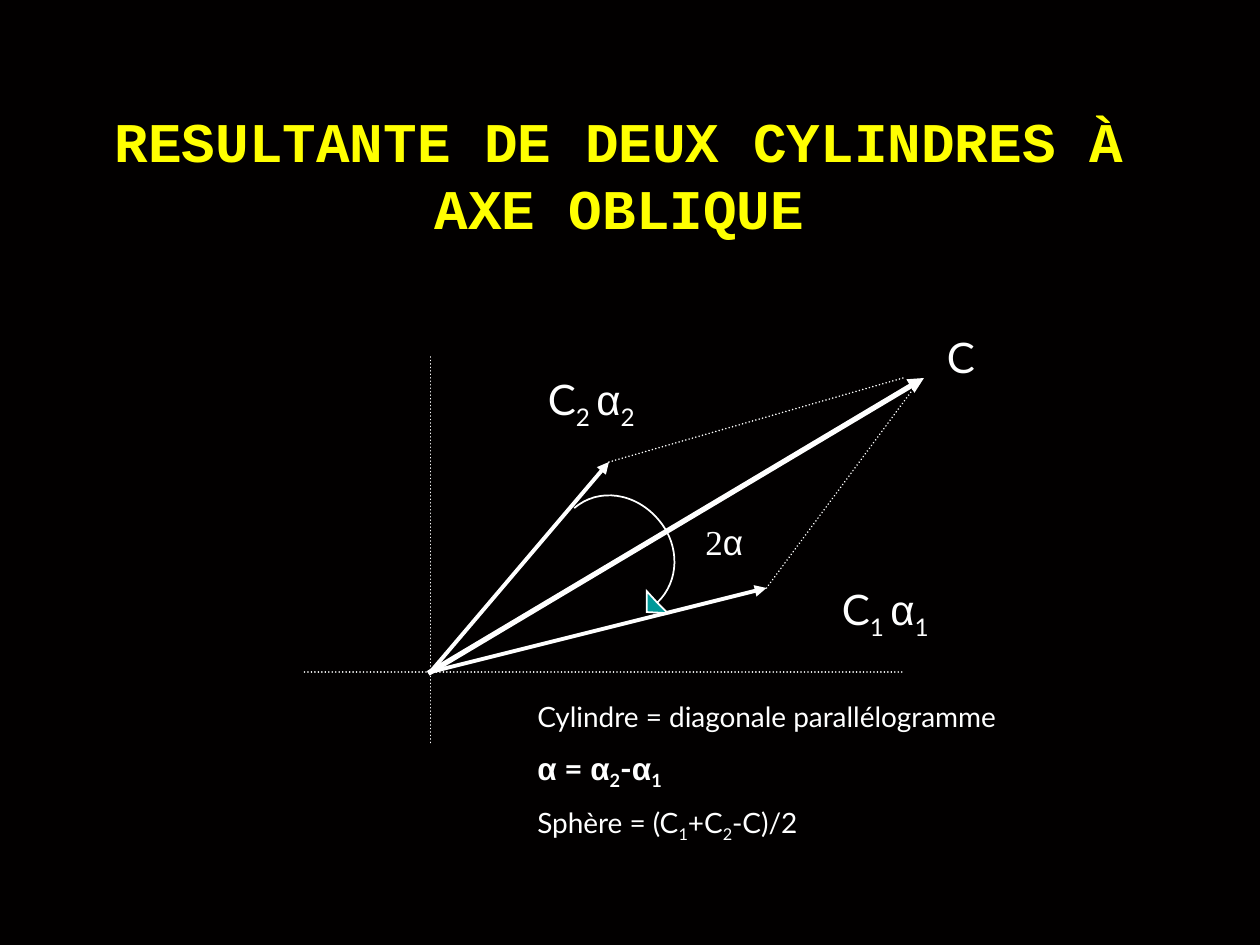
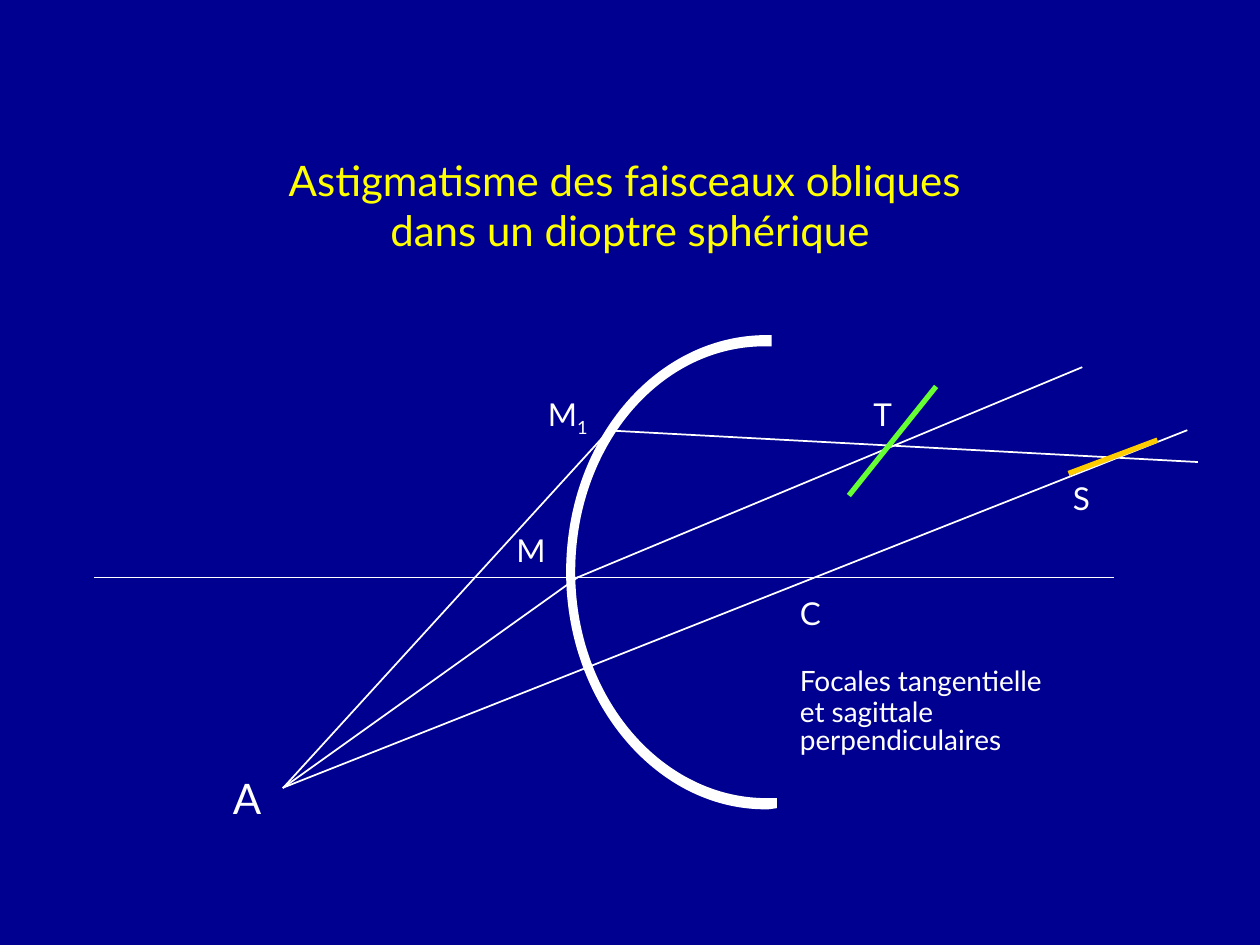
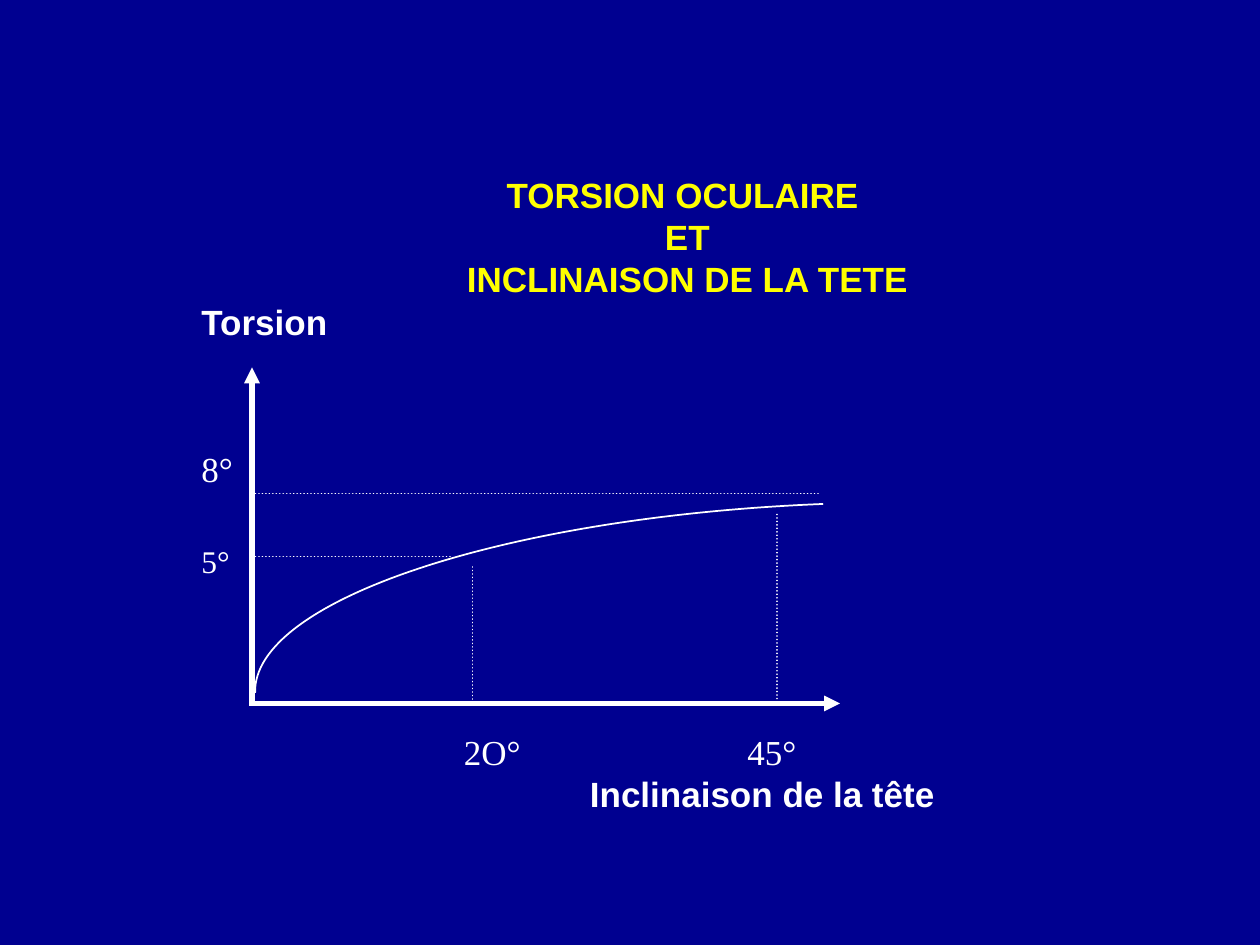
from itertools import groupby

from lxml import etree
from pptx import Presentation
from pptx.dml.color import RGBColor
from pptx.enum.dml import MSO_LINE
from pptx.enum.shapes import MSO_CONNECTOR
from pptx.enum.text import MSO_ANCHOR, PP_ALIGN
from pptx.oxml.ns import qn
from pptx.util import Emu, Pt

PX = 7620  # 120 px to the inch
BLACK = RGBColor(0x02, 0x00, 0x00)
NAVY = RGBColor(0x00, 0x00, 0x90)
WHITE = RGBColor(0xFF, 0xFF, 0xFF)
YELLOW = RGBColor(0xFF, 0xFF, 0x00)
TEAL = RGBColor(0x00, 0x99, 0x99)
GREEN = RGBColor(0x66, 0xFF, 0x33)
AMBER = RGBColor(0xFF, 0xCC, 0x00)

LATO, ARIAL, TIMES, COURIER = "Lato", "Arial", "Times New Roman", "Courier New"
LEFT, CENTER = PP_ALIGN.LEFT, PP_ALIGN.CENTER
TOP, MIDDLE = MSO_ANCHOR.TOP, MSO_ANCHOR.MIDDLE
DOTTED = MSO_LINE.ROUND_DOT
STRAIGHT = MSO_CONNECTOR.STRAIGHT


def px(n):
    return Emu(n * PX)


def new_slide(prs, background):
    s = prs.slides.add_slide(prs.slide_layouts[6])
    s.background.fill.solid()
    s.background.fill.fore_color.rgb = background
    return s


def add_run(p, content, size, font, color, bold, subscript):
    r = p.add_run()
    r.text = content
    r.font.size = Pt(size)
    r.font.name = font
    r.font.bold = bold
    r.font.color.rgb = color
    if subscript:
        r._r.get_or_add_rPr().set("baseline", "-25000")


def add_runs(p, content, size, font, color, bold):
    """Write one line: _ lowers the next character, and α is always in Arial."""
    head, *tails = content.split("_")
    pieces = [(head, False)]
    for tail in tails:
        pieces += [(tail[0], True), (tail[1:], False)]
    for piece, subscript in pieces:
        for is_alpha, chars in groupby(piece, lambda c: c == "α"):
            add_run(p, "".join(chars), size, ARIAL if is_alpha else font,
                    color, bold, subscript)


def text(s, x, y, w, h, *paragraphs, size=18, font=LATO, color=WHITE, bold=False,
         align=LEFT, anchor=TOP):
    """A paragraph is a string, or a (string, size, bold, line spacing) tuple."""
    tf = s.shapes.add_textbox(px(x), px(y), px(w), px(h)).text_frame
    tf.word_wrap = True
    tf.vertical_anchor = anchor
    for i, item in enumerate(paragraphs):
        if isinstance(item, str):
            item = (item, size, bold, None)
        content, p_size, p_bold, spacing = item
        p = tf.add_paragraph() if i else tf.paragraphs[0]
        p.alignment = align
        if i:
            p.space_before = Pt(p_size / 2)
        if spacing:
            p.line_spacing = spacing
        for j, row in enumerate(content.split("\n")):
            if j:
                p.add_line_break()
            add_runs(p, row, p_size, font, color, p_bold)


def title(s, x, y, w, content, **style):
    text(s, x, y, w, 150, content, color=YELLOW, align=CENTER, anchor=MIDDLE, **style)


def line(s, start, end, width=1, color=WHITE, dash=None, arrow=False):
    c = s.shapes.add_connector(STRAIGHT, *map(px, start + end))
    c.line.color.rgb = color
    c.line.width = Pt(width)
    if dash:
        c.line.dash_style = dash
    spPr = c._element.spPr
    ln = spPr.find(qn("a:ln"))
    ln.set("cap", "rnd" if dash else "sq")
    if arrow:
        etree.SubElement(ln, qn("a:tailEnd"), type="triangle")
    etree.SubElement(spPr, qn("a:effectLst"))


def outline(s, start, *segments, fill=None):
    """Segments of one point are straight, those of three are Bézier curves.

    The outline is closed when it has a fill.
    """
    builder = s.shapes.build_freeform(*map(px, start))
    points = [(px(x), px(y)) for segment in segments for x, y in segment]
    builder.add_line_segments(points, close=fill is not None)
    sp = builder.convert_to_shape()
    sp.shadow.inherit = False
    if fill is None:
        sp.fill.background()
    else:
        sp.fill.solid()
        sp.fill.fore_color.rgb = fill
    sp.line.color.rgb = WHITE
    sp.line.width = Pt(1)
    spPr = sp._element.spPr
    etree.SubElement(spPr.find(qn("a:ln")), qn("a:miter"), lim="800000")

    route = spPr.find(".//" + qn("a:path"))
    nodes = iter(route.findall(qn("a:lnTo")))
    for segment in segments:
        steps = [next(nodes) for _ in segment]
        if len(steps) == 3:
            curve = etree.Element(qn("a:cubicBezTo"))
            steps[0].addprevious(curve)
            for step in steps:
                curve.append(step[0])
                route.remove(step)


def cylinders_slide(prs):
    s = new_slide(prs, BLACK)
    title(s, 80, 90, 1020, "RESULTANTE DE DEUX CYLINDRES À AXE OBLIQUE",
          size=32, font=COURIER, bold=True)

    origin, c1, c2, resultant = (410, 640), (730, 560), (580, 440), (880, 360)
    line(s, origin, c1, 2.25, arrow=True)
    line(s, origin, c2, 2.25, arrow=True)
    line(s, c2, (860, 360), dash=DOTTED)
    line(s, c1, (870, 370), dash=DOTTED)
    line(s, origin, resultant, 3, arrow=True)
    line(s, (290, 640), (860, 640), dash=DOTTED)
    line(s, (410, 340), (410, 710), dash=DOTTED)

    text(s, 500, 660, 600, 146,
         "Cylindre = diagonale parallélogramme",
         ("α = α_2-α_1", 18, True, None),
         "Sphère = (C_1+C_2-C)/2", size=16)
    for x, y, label in ((790, 550, "C_1_ α_1"), (510, 350, "C_2_ α_2"), (890, 310, "C")):
        text(s, x, y, 230, 60, label, size=24)

    tip, *arc = [(626, 574), (647, 554), (648, 520), (628, 496),
                 (606, 469), (570, 464), (547, 484)]
    back = [*arc[-2::-1], tip]
    arrowhead = [[(636, 584)], [(616, 583)], [(616, 563)]]
    outline(s, tip, arc[:3], arc[3:], back[:3], back[3:], *arrowhead, fill=TEAL)
    text(s, 660, 490, 160, 52, "2α", size=20, font=TIMES)


def astigmatism_slide(prs):
    s = new_slide(prs, NAVY)
    title(s, 90, 120, 1020,
          "Astigmatisme des faisceaux obliques \ndans un dioptre sphérique", size=24)
    line(s, (90, 550), (1060, 550))

    outline(s, (739, 761), [(732, 761)],
            [(631, 762), (548, 666), (547, 547)],
            [(546, 427), (626, 330), (727, 329)],
            [(734, 329)], [(734, 320)], [(727, 320)],
            [(623, 322), (539, 422), (540, 547)],
            [(541, 671), (628, 772), (732, 770)],
            [(739, 769)], fill=WHITE)

    a, m, m1 = (270, 750), (550, 550), (580, 410)
    for start, end in ((a, m), (m, (1030, 350)), (a, m1), (m1, (1140, 440)), (a, (1130, 410))):
        line(s, start, end)

    text(s, 210, 730, 190, 62, "A", size=24)
    for x, y, label in ((510, 370, "M_1"), (480, 500, "M"), (750, 560, "C"),
                        (820, 370, "T"), (1010, 450, "S")):
        text(s, x, y, 190, 49, label)
    line(s, (890, 370), (810, 470), 3, GREEN)
    line(s, (1020, 450), (1100, 420), 3, AMBER)
    text(s, 750, 640, 390, 92,
         ("Focales tangentielle", 16, False, 0.5),
         ("et sagittale", 16, False, 0.5),
         ("perpendiculaires", 16, False, 0.4))


def torsion_slide(prs):
    s = new_slide(prs, NAVY)
    title(s, 250, 150, 800, "TORSION OCULAIRE\n ET\n INCLINAISON DE LA TETE",
          size=20, font=ARIAL, bold=True)

    origin = (240, 670)
    line(s, origin, (800, 670), 3, arrow=True)
    line(s, origin, (240, 350), 3, arrow=True)
    outline(s, (784, 480), [(481, 492), (240, 572), (243, 660)])
    for start, end in (((240, 470), (780, 470)), ((450, 540), (450, 670)),
                       ((240, 530), (430, 530)), ((740, 490), (740, 670))):
        line(s, start, end, dash=DOTTED)

    for x, y, label, size in ((180, 510, "5°", 18), (180, 420, "8°", 20),
                              (430, 690, "2O°", 20), (700, 690, "45°", 20)):
        text(s, x, y, 130, 52, label, size=size, font=TIMES)
    for x, y, w, label in ((550, 730, 380, "Inclinaison de la tête"), (180, 280, 260, "Torsion")):
        text(s, x, y, w, 52, label, size=20, font=ARIAL, bold=True)


def main():
    prs = Presentation()
    prs.slide_width, prs.slide_height = px(1200), px(900)
    cylinders_slide(prs)
    astigmatism_slide(prs)
    torsion_slide(prs)
    prs.save("out.pptx")


if __name__ == "__main__":
    main()
